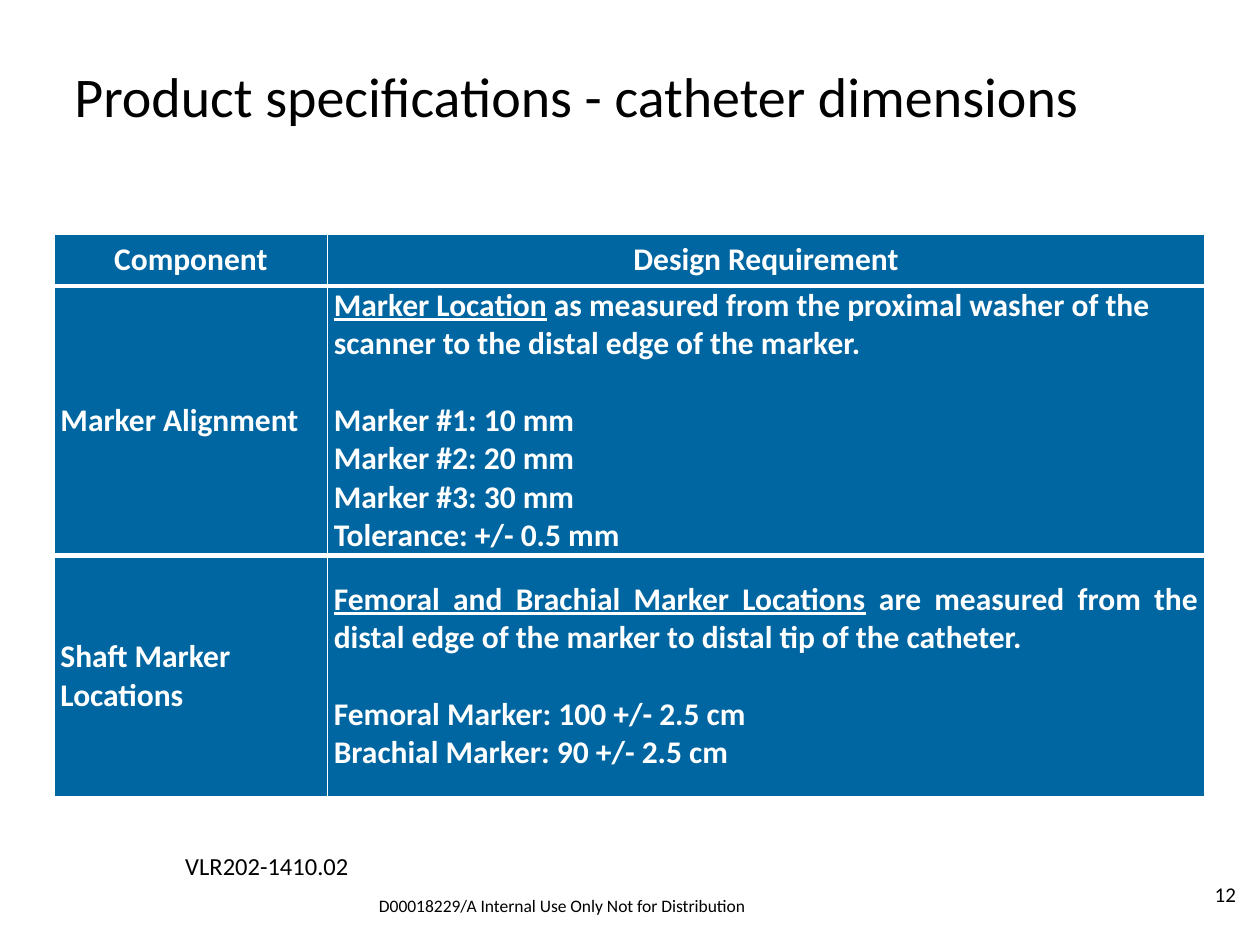
import pptx
import pptx.util
import pptx.dml.color
import pptx.enum.text
import pptx.oxml.ns
from lxml import etree

Inches, Pt = pptx.util.Inches, pptx.util.Pt
ALIGN = pptx.enum.text.PP_ALIGN
ANCHOR = pptx.enum.text.MSO_ANCHOR
BLUE = pptx.dml.color.RGBColor(0x00, 0x66, 0xA1)
WHITE = pptx.dml.color.RGBColor(0xFF, 0xFF, 0xFF)
BLACK = pptx.dml.color.RGBColor(0x00, 0x00, 0x00)
FONT = "Calibri"


def fill_text_box(s, box, text, size, align=ALIGN.LEFT):
    """Place s at box and give it one unpadded, top-anchored black line."""
    s.left, s.top, s.width, s.height = [Inches(v) for v in box]
    tf = s.text_frame
    tf.margin_left = tf.margin_top = tf.margin_right = tf.margin_bottom = 0
    tf.word_wrap = True
    tf.auto_size = pptx.enum.text.MSO_AUTO_SIZE.NONE
    tf.vertical_anchor = ANCHOR.TOP
    tf.text = text
    p = tf.paragraphs[0]
    p.alignment = align
    font = p.runs[0].font
    font.name, font.size, font.color.rgb = FONT, Pt(size), BLACK


def add_border(cell, side, width):
    tc_pr = cell._tc.get_or_add_tcPr()
    qn = pptx.oxml.ns.qn
    ln = etree.SubElement(tc_pr, qn("a:ln" + side), w=str(Pt(width)))
    fill = etree.SubElement(ln, qn("a:solidFill"))
    etree.SubElement(fill, qn("a:srgbClr"), val=str(WHITE))


prs = pptx.Presentation()
prs.slide_width, prs.slide_height = Inches(10), Inches(7.5)
slide = prs.slides.add_slide(prs.slide_layouts[5])

fill_text_box(slide.shapes.title, (0.59, 0.49, 8.82, 1.1),
              "Product specifications - catheter dimensions", 32)

# Each cell: alignment, underlined lead, rest of the first paragraph, values
rows = [
    [(ALIGN.CENTER, "", "Component", []),
     (ALIGN.CENTER, "", "Design Requirement", [])],
    [(ALIGN.LEFT, "", "Marker Alignment", []),
     (ALIGN.LEFT, "Marker Location",
      " as measured from the proximal washer of the scanner to the distal"
      " edge of the marker.",
      ["Marker #1: 10 mm", "Marker #2: 20 mm", "Marker #3: 30 mm",
       "Tolerance: +/- 0.5 mm"])],
    [(ALIGN.LEFT, "", "Shaft Marker Locations", []),
     (ALIGN.JUSTIFY, "Femoral and Brachial Marker Locations",
      " are measured from the distal edge of the marker to distal tip of the"
      " catheter.",
      ["Femoral Marker: 100 +/- 2.5 cm", "Brachial Marker: 90 +/- 2.5 cm"])],
]
col_widths = [2.17, 6.96]
row_heights = [0.41, 2.13, 1.92]
table = slide.shapes.add_table(
    len(rows), len(col_widths), Inches(0.43), Inches(1.86),
    Inches(sum(col_widths)), Inches(sum(row_heights))).table
for col, width in zip(table.columns, col_widths):
    col.width = Inches(width)
for row, height in zip(table.rows, row_heights):
    row.height = Inches(height)

for i, row in enumerate(rows):
    for j, (align, lead, rest, values) in enumerate(row):
        cell = table.cell(i, j)
        cell.margin_left = cell.margin_right = Inches(0.05)
        cell.margin_top = cell.margin_bottom = 0
        cell.vertical_anchor = ANCHOR.MIDDLE
        add_border(cell, "L", 1)
        add_border(cell, "R", 1)
        add_border(cell, "T", 3 if i > 0 else 1)
        add_border(cell, "B", 3 if i < len(rows) - 1 else 1)
        cell.fill.solid()
        cell.fill.fore_color.rgb = BLUE

        tf = cell.text_frame
        p = tf.paragraphs[0]
        p.alignment = align
        if lead:
            r = p.add_run()
            r.text = lead
            r.font.underline = True
        p.add_run().text = rest
        for k, value in enumerate(values):
            p = tf.add_paragraph()
            p.text = value
            if k == 0:
                p.space_before = Pt(22)
        for p in tf.paragraphs:
            for r in p.runs:
                r.font.name, r.font.size, r.font.bold = FONT, Pt(18), True
                r.font.color.rgb = WHITE

footers = [
    ((9.64, 7, 0.29, 0.22), "12", 12, ALIGN.LEFT),
    ((1.47, 6.75, 5.88, 0.35), "VLR202-1410.02", 14, ALIGN.LEFT),
    ((2.7, 7.1, 3.52, 0.16),
     "D00018229/A Internal Use Only Not for Distribution", 10, ALIGN.CENTER),
]
for box, text, size, align in footers:
    s = slide.shapes.add_textbox(0, 0, 0, 0)
    fill_text_box(s, box, text, size, align)

prs.save("out.pptx")
